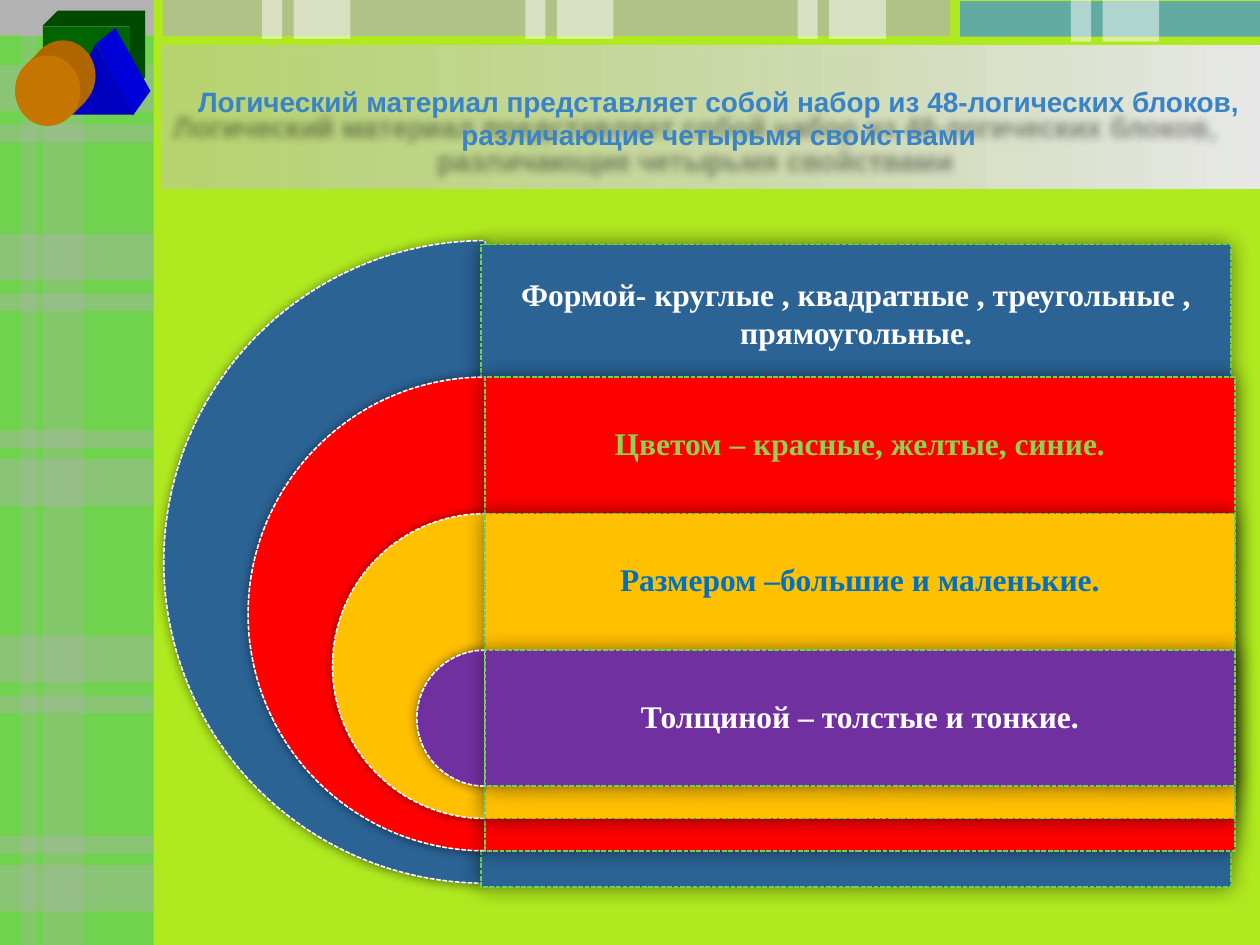
"""Build a slide on the four properties of logic blocks."""
from lxml import etree
from pptx import Presentation
from pptx import util as u
from pptx.dml.color import RGBColor
from pptx.enum import dml, shapes, text
from pptx.oxml import ns

LIME = RGBColor(0xAF, 0xE9, 0x1F)
GREEN = RGBColor(0x70, 0xD3, 0x4D)
GRAY = RGBColor(0xB2, 0xB2, 0xB2)
SILVER = RGBColor(0xC0, 0xC0, 0xC0)
PALE = RGBColor(0xE8, 0xE8, 0xE8)
SKY = RGBColor(0x41, 0x92, 0xDB)
WHITE = RGBColor(0xFF, 0xFF, 0xFF)
TITLE_BLUE = RGBColor(0x3A, 0x84, 0xC6)
CUBE_FRONT = RGBColor(0x00, 0x64, 0x00)
CUBE_SIDE = RGBColor(0x00, 0x4A, 0x00)
PRISM_FRONT = RGBColor(0x00, 0x00, 0xC0)
PRISM_SIDE = RGBColor(0x00, 0x00, 0xD8)
CYLINDER_FRONT = RGBColor(0xC4, 0x76, 0x00)
CYLINDER_SIDE = RGBColor(0xB0, 0x66, 0x00)
STEEL = RGBColor(0x2B, 0x63, 0x95)
RED = RGBColor(0xFF, 0x00, 0x00)
AMBER = RGBColor(0xFF, 0xC0, 0x00)
PURPLE = RGBColor(0x70, 0x30, 0xA0)
LIGHT_GREEN = RGBColor(0x92, 0xD0, 0x50)
BLUE = RGBColor(0x00, 0x70, 0xC0)

KIND = shapes.MSO_SHAPE

presentation = Presentation()
presentation.slide_width = u.Pt(720)
presentation.slide_height = u.Pt(540)
slide = presentation.slides.add_slide(presentation.slide_layouts[5])
slide.background.fill.solid()
slide.background.fill.fore_color.rgb = LIME


def add_block(kind, left, top, width, height, color, opacity=100):
    shape = slide.shapes.add_shape(kind, u.Pt(left), u.Pt(top), u.Pt(width), u.Pt(height))
    shape.shadow.inherit = False
    shape.fill.solid()
    shape.fill.fore_color.rgb = color
    shape.line.fill.background()
    if opacity < 100:
        fill_color = shape.element.spPr.find(".//" + ns.qn("a:srgbClr"))
        etree.SubElement(fill_color, ns.qn("a:alpha"), val=str(opacity * 1000))
    return shape


def add_shadow(shape, blur, distance, angle, opacity):
    shape.shadow.inherit = False
    effects = shape.element.spPr.find(ns.qn("a:effectLst"))
    shadow = etree.SubElement(
        effects, ns.qn("a:outerShdw"), blurRad=str(u.Pt(blur)), dist=str(u.Pt(distance)),
        dir=str(angle * 60000), algn="ctr", rotWithShape="0")
    color = etree.SubElement(shadow, ns.qn("a:srgbClr"), val="000000")
    etree.SubElement(color, ns.qn("a:alpha"), val=str(opacity * 1000))


add_block(KIND.RECTANGLE, 0, 20.2, 87.8, 519.8, GREEN)
add_block(KIND.RECTANGLE, 0, 0, 87.8, 20.2, GRAY)
for wide_top, thin_gap in [(37.1, 34.2), (133.6, 34.2), (262.4, -16.4), (363.2, 34.2), (494.3, -16.6)]:
    add_block(KIND.RECTANGLE, 0, wide_top, 87.8, 26.6, GRAY, 40)
    add_block(KIND.RECTANGLE, 0, wide_top + thin_gap, 87.8, 10.1, GRAY, 40)
for height, opacity in [(540, 30), (20.9, 50)]:
    add_block(KIND.RECTANGLE, 12.2, 0, 8.6, height, GRAY, opacity)
    add_block(KIND.RECTANGLE, 24.5, 0, 23, height, GRAY, opacity)
add_block(KIND.RECTANGLE, 93, 0, 450, 20.5, GRAY, 70)
add_block(KIND.RECTANGLE, 548.6, 0.7, 171.4, 20.2, SKY, 70)
for left, height in [(149.8, 22.3), (300.2, 22.3), (455.8, 22.3), (612, 23.8)]:
    add_block(KIND.RECTANGLE, left, 0, 11.5, height, WHITE, 50)
    add_block(KIND.RECTANGLE, left + 18, 0, 32.4, height, WHITE, 50)

title_band = add_block(KIND.RECTANGLE, 92.9, 25.9, 627.1, 82.1, SILVER)
title_band.fill.gradient()
title_band.fill.gradient_angle = 0
for stop, color in zip(title_band.fill.gradient_stops, [SILVER, PALE]):
    stop.color.rgb = color
first_color = title_band.element.spPr.find(".//" + ns.qn("a:srgbClr"))
etree.SubElement(first_color, ns.qn("a:alpha"), val="50000")

SOLIDS = [
    ([(24.5, 15.1), (33.2, 5.8), (82.9, 5.8), (82.9, 44), (74.2, 55.4), (74.2, 15.1)],
     CUBE_SIDE, KIND.RECTANGLE, (24.5, 15.1, 49.7, 40.3), CUBE_FRONT),
    ([(54.7, 25.2), (65.7, 15.5), (86, 52.5), (76.3, 65.5)],
     PRISM_SIDE, KIND.ISOSCELES_TRIANGLE, (33.1, 25.2, 43.2, 40.3), PRISM_FRONT),
    ([(14.2, 37.5), (22.8, 28.9), (49.2, 57.5), (40.6, 66.1)],
     CYLINDER_SIDE, KIND.OVAL, (8.6, 31.7, 37.4, 40.3), CYLINDER_FRONT),
]
for outline, side_color, kind, front, front_color in SOLIDS:
    if kind == KIND.OVAL:
        add_block(kind, front[0] + 8.6, front[1] - 8.6, front[2], front[3], side_color)
    builder = slide.shapes.build_freeform(*outline[0], scale=u.Pt(1))
    builder.add_line_segments(outline[1:])
    side = builder.convert_to_shape()
    side.shadow.inherit = False
    side.fill.solid()
    side.fill.fore_color.rgb = side_color
    side.line.fill.background()
    add_block(kind, *front, front_color)

title = slide.shapes.title
slide.shapes._spTree.append(title.element)
title.left, title.top, title.width, title.height = u.Pt(101.5), u.Pt(37.4), u.Pt(618.5), u.Pt(59.8)
title.text_frame.text = "Логический материал представляет собой набор из 48-логических блоков, различающие четырьмя свойствами"
title.text_frame.vertical_anchor = text.MSO_ANCHOR.MIDDLE
paragraph = title.text_frame.paragraphs[0]
paragraph.alignment = text.PP_ALIGN.CENTER
font = paragraph.runs[0].font
font.name, font.size, font.bold = "Arial", u.Pt(16), True
font.color.rgb = TITLE_BLUE
add_shadow(title, 5, 20, 135, 40)

PROPERTIES = [
    ("Формой- круглые , квадратные , треугольные , прямоугольные.", STEEL, WHITE, 275, 139.7, 1),
    ("Цветом – красные, желтые, синие.", RED, LIGHT_GREEN, 277.2, 215.5, 0.9),
    ("Размером –большие и маленькие.", AMBER, BLUE, 277.2, 293.5, 0.9),
    ("Толщиной – толстые и тонкие.", PURPLE, WHITE, 277.2, 371.5, 0.9),
]
for index, (wording, color, text_color, left, top, spacing) in enumerate(PROPERTIES):
    size = 367.2 - 96.5 * index
    pie = add_block(KIND.PIE, 93.6 + 48.2 * index, 137.5 + 78 * index, size, size, color)
    pie.adjustments[0], pie.adjustments[1] = 54, 162
    panel = add_block(KIND.RECTANGLE, left, top, 428.4, size, color)
    for shape, line_color, blur in [(pie, WHITE, 6), (panel, GREEN, 12)]:
        shape.line.color.rgb = line_color
        shape.line.width = u.Pt(0.9)
        shape.line.dash_style = dml.MSO_LINE.SQUARE_DOT
        add_shadow(shape, blur, 0, 0, 50)

    label = slide.shapes.add_textbox(u.Pt(left), u.Pt(top), u.Pt(428.4), u.Pt(77.8))
    frame = label.text_frame
    frame.text = wording
    frame.word_wrap = True
    frame.vertical_anchor = text.MSO_ANCHOR.MIDDLE
    frame.margin_left = frame.margin_right = frame.margin_top = frame.margin_bottom = u.Pt(5)
    paragraph = frame.paragraphs[0]
    paragraph.alignment = text.PP_ALIGN.CENTER
    paragraph.line_spacing = spacing
    font = paragraph.runs[0].font
    font.name, font.size, font.bold = "Times New Roman", u.Pt(18), True
    font.color.rgb = text_color

presentation.save("out.pptx")
